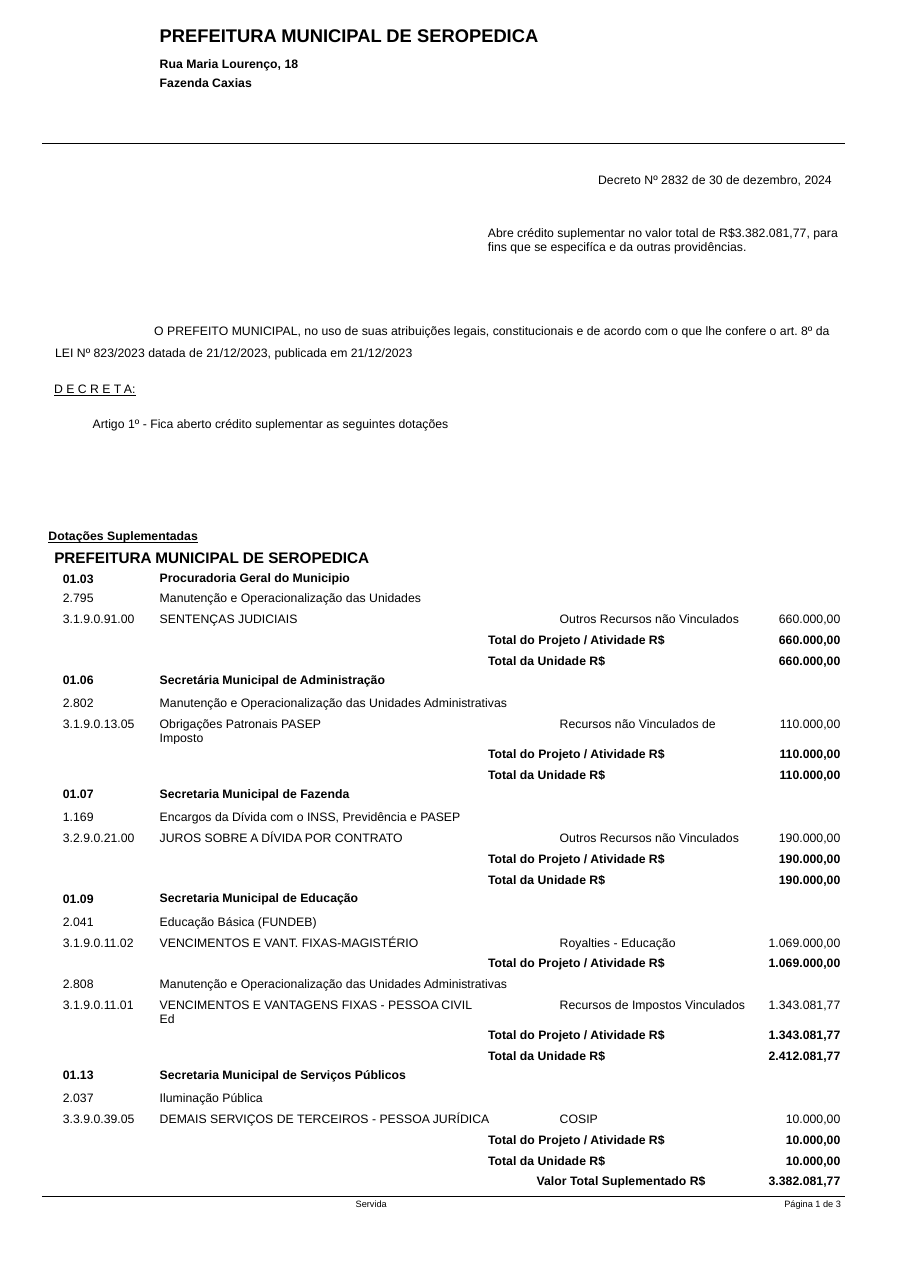
from dataclasses import dataclass
from typing import Optional, Union

from lxml.etree import SubElement
from pptx import Presentation
from pptx.dml.color import RGBColor
from pptx.enum.shapes import MSO_CONNECTOR
from pptx.enum.text import MSO_ANCHOR, MSO_AUTO_SIZE, PP_ALIGN
from pptx.oxml.ns import qn
from pptx.slide import Slide
from pptx.table import Table, _Cell
from pptx.text.text import TextFrame
from pptx.util import Length, Pt

BLACK = RGBColor(0, 0, 0)
FACE = "Arial"
LEFT, RIGHT = 27.4, 552.2
ROW = 13.7
WIDTHS = (57.6, 400.3, 54.7)
CODE, NAME, TOTAL, GRAND = 2.2, 7.9, 222.5, 254.2
SOURCE = 261.4


@dataclass
class Para:
    text: str
    size: float = 8
    bold: bool = False
    under: bool = False
    left: float = 0
    first: float = 0
    before: float = 0
    line: Union[float, Length] = 1.0
    align: PP_ALIGN = PP_ALIGN.LEFT
    tab: Optional[float] = None


@dataclass
class Project:
    code: str
    name: str
    item: str
    label: str
    source: str
    value: str


@dataclass
class Unit:
    code: str
    name: str
    total: str
    projects: list[Project]


ADMIN = "Manutenção e Operacionalização das Unidades Administrativas"
OTHER = "Outros Recursos não Vinculados"
UNITS = [
    Unit("01.03", "Procuradoria Geral do Municipio", "660.000,00", [
        Project("2.795", "Manutenção e Operacionalização das Unidades",
                "3.1.9.0.91.00", "SENTENÇAS JUDICIAIS", OTHER, "660.000,00")]),
    Unit("01.06", "Secretária Municipal de Administração", "110.000,00", [
        Project("2.802", ADMIN, "3.1.9.0.13.05", "Obrigações Patronais PASEP",
                "Recursos não Vinculados de Imposto", "110.000,00")]),
    Unit("01.07", "Secretaria Municipal de Fazenda", "190.000,00", [
        Project("1.169", "Encargos da Dívida com o INSS, Previdência e PASEP",
                "3.2.9.0.21.00", "JUROS SOBRE A DÍVIDA POR CONTRATO", OTHER, "190.000,00")]),
    Unit("01.09", "Secretaria Municipal de Educação", "2.412.081,77", [
        Project("2.041", "Educação Básica (FUNDEB)", "3.1.9.0.11.02",
                "VENCIMENTOS E VANT. FIXAS-MAGISTÉRIO", "Royalties - Educação", "1.069.000,00"),
        Project("2.808", ADMIN, "3.1.9.0.11.01", "VENCIMENTOS E VANTAGENS FIXAS - PESSOA CIVIL",
                "Recursos de Impostos Vinculados Ed", "1.343.081,77")]),
    Unit("01.13", "Secretaria Municipal de Serviços Públicos", "10.000,00", [
        Project("2.037", "Iluminação Pública", "3.3.9.0.39.05",
                "DEMAIS SERVIÇOS DE TERCEIROS - PESSOA JURÍDICA", "COSIP", "10.000,00")]),
]


def write(frame: TextFrame, paras: list[Para]) -> None:
    for pos, para in enumerate(paras):
        part = frame.add_paragraph() if pos else frame.paragraphs[0]
        part.text = para.text
        props = part._p.get_or_add_pPr()
        if para.left:
            props.set("marL", str(Pt(para.left)))
            props.set("indent", str(Pt(para.first)))
            SubElement(props, qn("a:buNone"))
        if para.tab:
            stops = SubElement(props, qn("a:tabLst"))
            SubElement(stops, qn("a:tab"), pos=str(Pt(para.tab)), algn="l")
        part.alignment = para.align
        part.line_spacing = para.line
        part.space_before = Pt(para.before)
        for run in part.runs:
            run.font.name = FACE
            run.font.size = Pt(para.size)
            run.font.bold = para.bold
            run.font.underline = para.under
            run.font.color.rgb = BLACK
        if not para.text:
            SubElement(part._p, qn("a:endParaRPr"), sz=str(int(para.size * 100)))


def trim(box: Union[TextFrame, _Cell], top: float, left: float = 0, right: float = 0) -> None:
    box.margin_left, box.margin_right = Pt(left), Pt(right)
    box.margin_top, box.margin_bottom = Pt(top), Pt(0)


def place(shape, x: float, y: float, w: float, h: float,
          top: float, paras: list[Para], wrap: bool = True) -> None:
    shape.left, shape.top, shape.width, shape.height = Pt(x), Pt(y), Pt(w), Pt(h)
    frame = shape.text_frame
    frame.word_wrap = wrap
    frame.auto_size = MSO_AUTO_SIZE.NONE
    frame.vertical_anchor = MSO_ANCHOR.TOP
    trim(frame, top)
    write(frame, paras)


def note(slide: Slide, x: float, y: float, w: float, h: float,
         top: float, paras: list[Para], wrap: bool = True) -> None:
    box = slide.shapes.add_textbox(Pt(x), Pt(y), Pt(w), Pt(h))
    place(box, x, y, w, h, top, paras, wrap)


def rule(slide: Slide, y: float) -> None:
    line = slide.shapes.add_connector(MSO_CONNECTOR.STRAIGHT, Pt(LEFT), Pt(y), Pt(RIGHT), Pt(y))
    line.line.color.rgb = BLACK
    line.line.width = Pt(0.75)
    SubElement(line._element.spPr, qn("a:effectLst"))


@dataclass
class Row:
    code: str
    paras: list[Para]
    value: str = ""
    bold: bool = False
    top: float = 1.5
    drop: Optional[float] = None
    height: float = ROW
    inset: float = 0


def list_rows(units: list[Unit]) -> list[Row]:
    head = Para(units[0].name, bold=True, left=NAME, line=Pt(8.8))
    rows = [Row(units[0].code, [head], bold=True, top=0, height=11.5)]
    for unit, after in zip(units, [*units[1:], None]):
        for job in unit.projects:
            item = Para(f"{job.label}\t{job.source}", tab=SOURCE)
            sum_up = Para("Total do Projeto / Atividade R$", bold=True, left=TOTAL)
            rows += [Row(job.code, [Para(job.name, left=NAME)]),
                     Row(job.item, [item], job.value, inset=NAME),
                     Row("", [sum_up], job.value, True)]
        close = Para("Total da Unidade R$", bold=True, left=TOTAL)
        if after:
            head = Para(after.name, bold=True, left=NAME, before=3.1)
            rows.append(Row(after.code, [close, head], unit.total, True, 1.6, 13.9, 2 * ROW))
        else:
            rows.append(Row("", [close], unit.total, True, 1.6))
    grand = Para("Valor Total Suplementado R$", bold=True, left=GRAND, line=Pt(8.7))
    return rows + [Row("", [grand], "3.382.081,77", True, 1.1, height=11)]


def fill(table: Table, rows: list[Row]) -> None:
    table.first_row = table.horz_banding = False
    for col, width in zip(table.columns, WIDTHS):
        col.width = Pt(width)
    for pos, row in enumerate(rows):
        table.rows[pos].height = Pt(row.height)
        code = Para(row.code, bold=row.bold, left=CODE)
        value = Para(row.value, bold=row.bold, align=PP_ALIGN.RIGHT)
        texts = [[code], row.paras, [value]]
        tops = [row.drop or row.top, row.top, row.top]
        edges = [(0, 0), (row.inset, 0), (0, 2.2)]
        for col, (paras, top, (left, right)) in enumerate(zip(texts, tops, edges)):
            cell = table.cell(pos, col)
            cell.fill.background()
            trim(cell, top, left, right)
            write(cell.text_frame, paras)
    table.cell(0, 2).merge(table.cell(1, 2))


def main() -> None:
    deck = Presentation()
    deck.slide_width, deck.slide_height = Pt(594.72), Pt(841.68)
    slide = deck.slides.add_slide(deck.slide_layouts[1])
    town = "PREFEITURA MUNICIPAL DE SEROPEDICA"
    rule(slide, 94)
    place(slide.shapes.title, 103.7, 14.4, 251.3, 44.6, 1.3, [
        Para(town, 12, True, left=0.7),
        Para("Rua Maria Lourenço, 18", bold=True, left=0.7, before=4.5, line=1.25),
        Para("Fazenda Caxias", bold=True, left=0.7, line=1.25)])
    place(slide.placeholders[1], 34.6, 205.9, 510.5, 76.3, 0.9, [
        Para("O PREFEITO MUNICIPAL, no uso de suas atribuições legais, constitucionais e de acordo "
             "com o que lhe confere o art. 8º da LEI Nº 823/2023 datada de 21/12/2023, "
             "publicada em 21/12/2023", left=1.4, first=64.8, line=1.48),
        Para("D E C R E T A:", under=True, left=0.7, before=14),
        Para("Artigo 1º - Fica aberto crédito suplementar as seguintes dotações",
             left=25.9, before=13.5)])
    note(slide, 318.2, 146.2, 230.4, 20.9, 1.6, [
        Para("Abre crédito suplementar no valor total de R$3.382.081,77, para fins que se "
             "especifíca e da outras providências.", left=0.7, line=Pt(9.2))])
    note(slide, 390.2, 111.6, 161.3, 11.5, 0.9, [
        Para("Decreto Nº 2832 de 30 de dezembro, 2024", left=0.7)], False)
    note(slide, 31, 342, 213.8, 29.5, 3.3, [
        Para("Dotações Suplementadas", bold=True, under=True, left=0.7),
        Para(town, 10, True, left=4.5, before=3.4)])
    rows = list_rows(UNITS)
    frame = slide.shapes.add_table(len(rows), len(WIDTHS), Pt(38.9), Pt(373.7),
                                   Pt(sum(WIDTHS)), Pt(sum(row.height for row in rows)))
    fill(frame.table, rows)
    rule(slide, 781.9)
    for text, x, width in (("Servida", 231.8, 23.8), ("Página 1 de 3", 511.9, 38.9)):
        note(slide, x, 782.6, width, 8.6, 0.7, [Para(text, 6, left=0.7)], False)
    deck.save("out.pptx")


if __name__ == "__main__":
    main()
